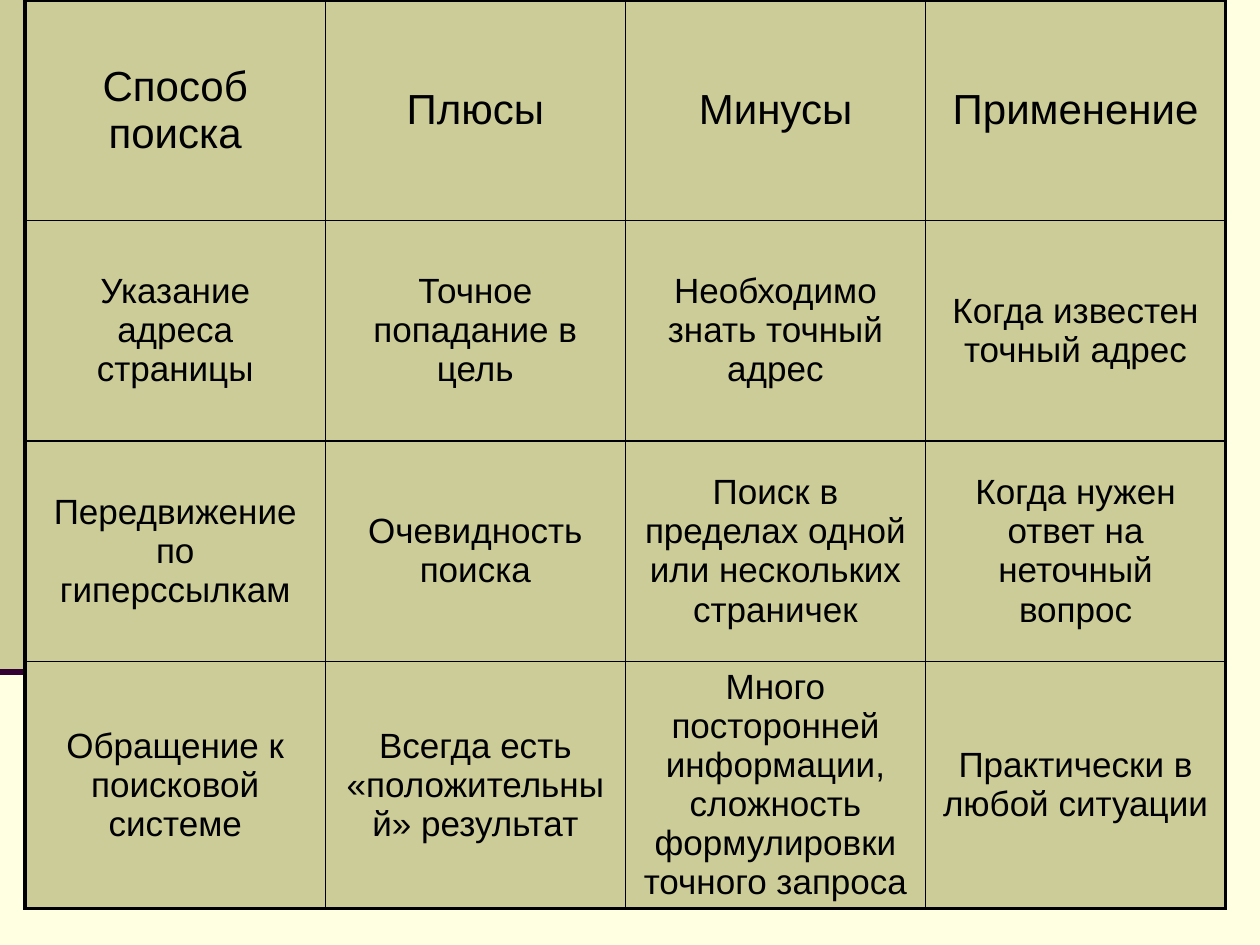
"""Build a slide with a table comparing ways of searching the Internet."""
import pptx
import pptx.dml.color
import pptx.enum.shapes
import pptx.enum.text
import pptx.oxml
import pptx.oxml.ns
import pptx.util

Pt = pptx.util.Pt
COLORS = {"background": "FFFFE1", "olive": "CCCC99", "rule": "330033", "ink": "000000"}
ROWS = [
    ("Способ поиска", "Плюсы", "Минусы", "Применение"),
    ("Указание адреса страницы", "Точное попадание в цель",
     "Необходимо знать точный адрес", "Когда известен точный адрес"),
    ("Передвижение по гиперссылкам", "Очевидность поиска",
     "Поиск в пределах одной или нескольких страничек",
     "Когда нужен ответ на неточный вопрос"),
    ("Обращение к поисковой системе", "Всегда есть «положительный» результат",
     "Много посторонней информации, сложность формулировки точного запроса",
     "Практически в любой ситуации"),
]
LEFT, COLUMN_WIDTH, ROW_HEIGHT = 14.4, 171.5, 126
HEADING_SIZE, BODY_SIZE = 24, 20
OUTER_LINE, INNER_LINE = 2.25, 1
BAND_WIDTH, BAND_HEIGHT = 48, 384


def rgb(name):
    return pptx.dml.color.RGBColor.from_string(COLORS[name])


def paint(fill, name):
    fill.solid()
    fill.fore_color.rgb = rgb(name)


def add_borders(cell, outer_edges):
    properties = cell._tc.get_or_add_tcPr()
    for side, is_outer in outer_edges.items():
        width = Pt(OUTER_LINE if is_outer else INNER_LINE)
        properties.append(pptx.oxml.parse_xml(
            f'<a:ln{side} {pptx.oxml.ns.nsdecls("a")} w="{width}"><a:solidFill>'
            f'<a:srgbClr val="{COLORS["ink"]}"/></a:solidFill></a:ln{side}>'))


def add_background(slide):
    paint(slide.background.fill, "background")
    band = slide.shapes.add_shape(
        pptx.enum.shapes.MSO_SHAPE.RECTANGLE, 0, 0, Pt(BAND_WIDTH), Pt(BAND_HEIGHT))
    band.shadow.inherit = False
    paint(band.fill, "olive")
    band.line.fill.background()
    rule = slide.shapes.add_connector(
        pptx.enum.shapes.MSO_CONNECTOR.STRAIGHT,
        0, Pt(BAND_HEIGHT), Pt(BAND_WIDTH), Pt(BAND_HEIGHT))
    rule.line.color.rgb = rgb("rule")
    rule.line.width = Pt(3.5)
    rule._element.spPr.append(
        pptx.oxml.parse_xml(f'<a:effectLst {pptx.oxml.ns.nsdecls("a")}/>'))


def add_comparison(slide):
    last_row, last_column = len(ROWS) - 1, len(ROWS[0]) - 1
    comparison = slide.shapes.add_table(
        len(ROWS), len(ROWS[0]), Pt(LEFT), 0,
        Pt(COLUMN_WIDTH * len(ROWS[0])), Pt(ROW_HEIGHT * len(ROWS))).table
    for r, texts in enumerate(ROWS):
        for c, text in enumerate(texts):
            cell = comparison.cell(r, c)
            add_borders(cell, {"L": c == 0, "R": c == last_column,
                               "T": r == 0, "B": r == last_row})
            paint(cell.fill, "olive")
            cell.vertical_anchor = pptx.enum.text.MSO_ANCHOR.MIDDLE
            cell.text_frame.text = text
            paragraph = cell.text_frame.paragraphs[0]
            paragraph.alignment = pptx.enum.text.PP_ALIGN.CENTER
            font = paragraph.runs[0].font
            font.name = "Arial"
            font.size = Pt(HEADING_SIZE if r == 0 else BODY_SIZE)
            font.bold = False
            font.color.rgb = rgb("ink")


def main():
    deck = pptx.Presentation()
    deck.slide_width, deck.slide_height = Pt(720), Pt(540)
    slide = deck.slides.add_slide(deck.slide_layouts[6])
    add_background(slide)
    add_comparison(slide)
    deck.save("out.pptx")


if __name__ == "__main__":
    main()
